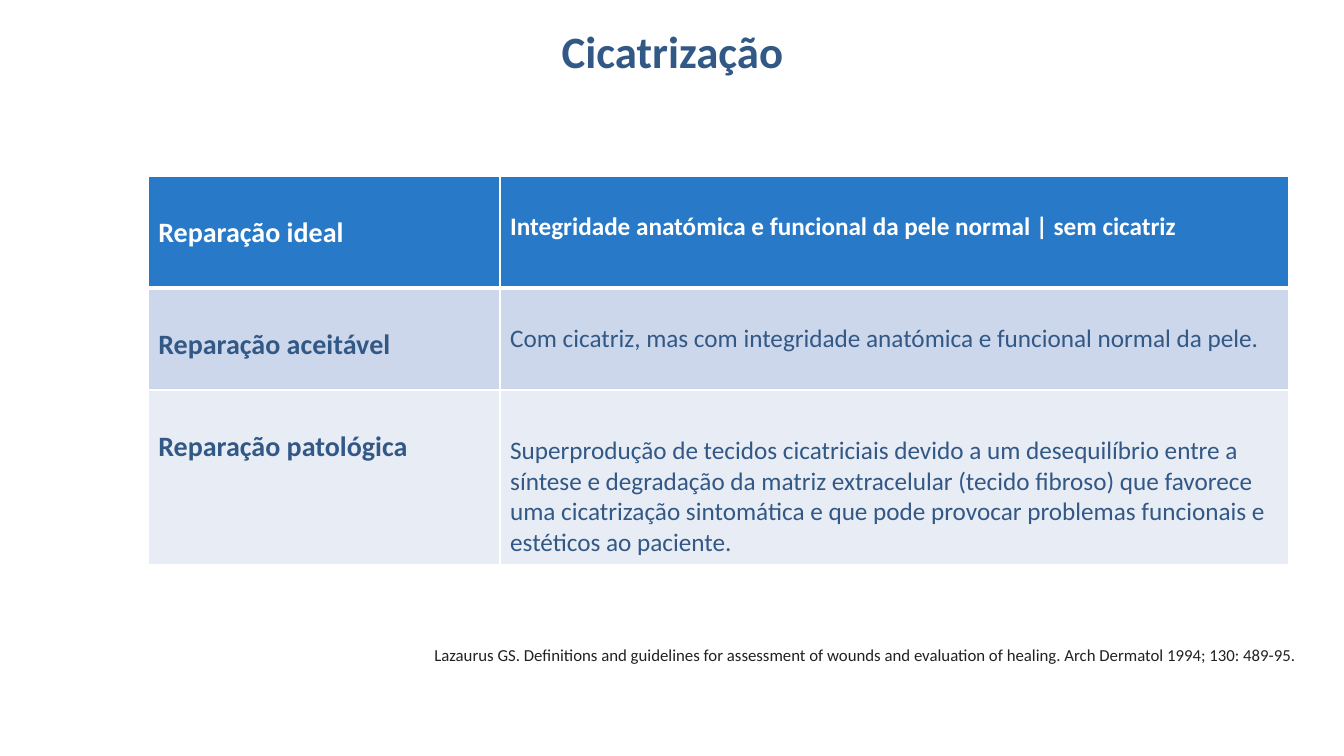
from lxml.etree import SubElement
from pptx import Presentation
from pptx.dml.color import RGBColor
from pptx.enum.text import MSO_ANCHOR as Anchor, MSO_AUTO_SIZE as AutoSize, PP_ALIGN as Align
from pptx.oxml.ns import qn
from pptx.util import Inches, Pt

FONT = "Calibri"
WHITE, NAVY, INK = "FFFFFF", "325886", "242021"

TITLE = "Cicatrização"
CITATION = ("Lazaurus GS. Definitions and guidelines for assessment of wounds and "
            "evaluation of healing. Arch Dermatol 1994; 130: 489-95.")
# repair type, outcome, fill, text colour, row height, top margin of each cell
REPAIRS = [
    ("Reparação ideal", "Integridade anatómica e funcional da pele normal | sem cicatriz",
     "287AC8", WHITE, 1.11, (0.39, 0.35)),
    ("Reparação aceitável",
     "Com cicatriz, mas com integridade anatómica e funcional normal da pele.",
     "CDD7EB", NAVY, 1.01, (0.39, 0.35)),
    ("Reparação patológica",
     "Superprodução de tecidos cicatriciais devido a um desequilíbrio entre a síntese e "
     "degradação da matriz extracelular (tecido fibroso) que favorece uma cicatrização "
     "sintomática e que pode provocar problemas funcionais e estéticos ao paciente.",
     "E8ECF5", NAVY, 1.73, (0.39, 0.45)),
]
COLUMN_WIDTHS = (3.49, 7.82)
COLUMN_SIZES = (20, 18)
TABLE_LEFT, TABLE_TOP = 1.47, 1.75


def rgb(value):
    return RGBColor.from_string(value)


def write(frame, text, size, color, bold=False, align=Align.LEFT):
    paragraph = frame.paragraphs[0]
    paragraph.alignment = align
    paragraph.space_before = Pt(0)
    run = paragraph.add_run()
    run.text = text
    font = run.font
    font.name, font.size, font.bold = FONT, Pt(size), bold
    font.color.rgb = rgb(color)
    return paragraph


def place(placeholder, box, anchor):
    """Move a placeholder to box (inches) and return its text frame."""
    placeholder.left, placeholder.top, placeholder.width, placeholder.height = map(Inches, box)
    frame = placeholder.text_frame
    frame.word_wrap = True
    frame.auto_size = AutoSize.NONE
    frame.vertical_anchor = anchor
    return frame


def add_borders(cell, bottom_width):
    properties = cell._tc.get_or_add_tcPr()
    widths = {"a:lnL": 1, "a:lnR": 1, "a:lnT": 1, "a:lnB": bottom_width}
    for position, (side, width) in enumerate(widths.items()):
        line = SubElement(properties, qn(side), w=str(Pt(width)))
        SubElement(SubElement(line, qn("a:solidFill")), qn("a:srgbClr"), val=WHITE)
        properties.insert(position, line)


def add_repair_table(slide):
    heights = [repair[4] for repair in REPAIRS]
    table = slide.shapes.add_table(
        len(REPAIRS), len(COLUMN_WIDTHS), Inches(TABLE_LEFT), Inches(TABLE_TOP),
        Inches(sum(COLUMN_WIDTHS)), Inches(sum(heights))).table
    for column, width in zip(table.columns, COLUMN_WIDTHS):
        column.width = Inches(width)
    for r, (kind, outcome, fill, color, height, margins) in enumerate(REPAIRS):
        table.rows[r].height = Inches(height)
        for c, text in enumerate((kind, outcome)):
            cell = table.cell(r, c)
            cell.fill.solid()
            cell.fill.fore_color.rgb = rgb(fill)
            cell.margin_top = Inches(margins[c])
            add_borders(cell, 3 if r == 0 else 1)
            write(cell.text_frame, text, COLUMN_SIZES[c], color, bold=r == 0 or c == 0)


def main():
    deck = Presentation()
    deck.slide_width, deck.slide_height = Inches(13.33), Inches(7.5)
    slide = deck.slides.add_slide(deck.slide_layouts[1])

    heading = place(slide.shapes.title, (0.67, 0.17, 12, 0.66), Anchor.MIDDLE)
    write(heading, TITLE, 32, NAVY, bold=True, align=Align.CENTER)

    reference = place(slide.placeholders[1], (0.29, 6.35, 12.67, 0.32), Anchor.TOP)
    citation = write(reference, CITATION, 12, INK, align=Align.RIGHT)
    properties = citation._p.get_or_add_pPr()
    properties.set("marL", "0")
    properties.set("indent", "0")
    SubElement(properties, qn("a:buNone"))

    add_repair_table(slide)
    deck.save("out.pptx")


if __name__ == "__main__":
    main()
